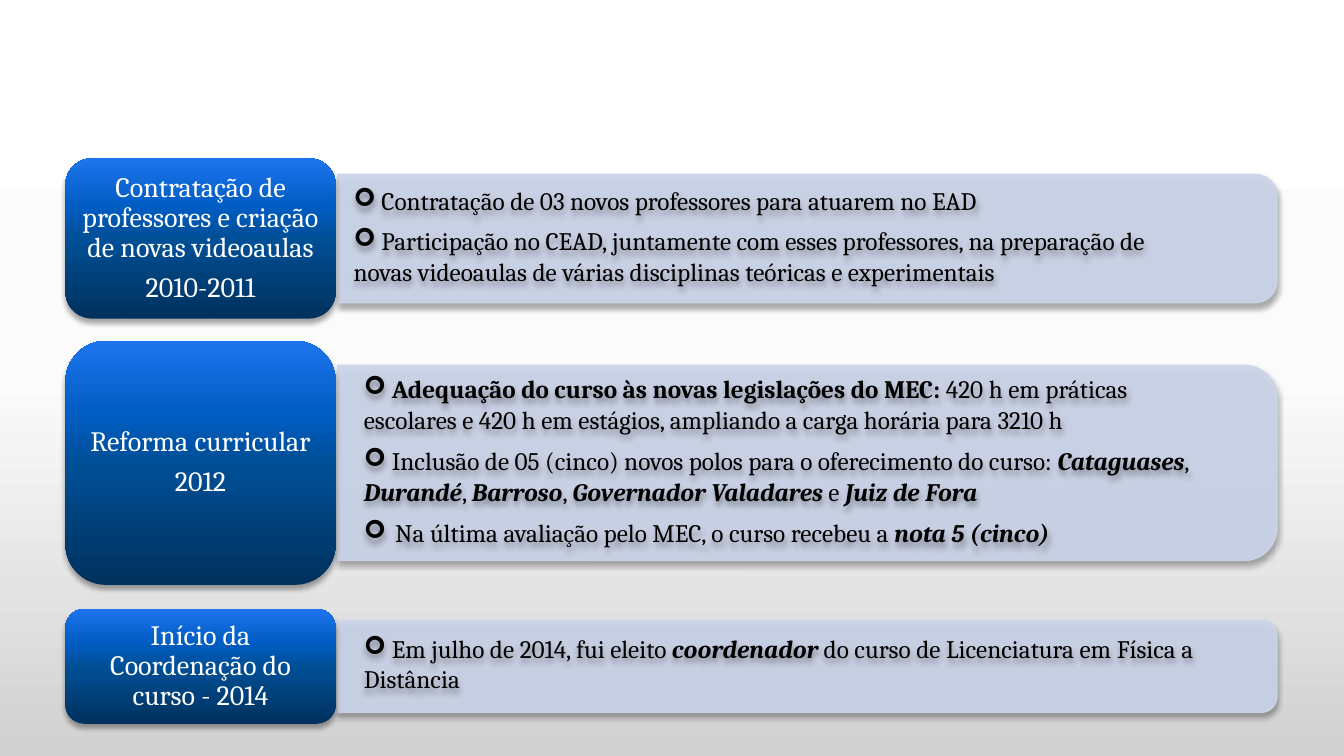
from lxml.etree import SubElement
from pptx import Presentation
from pptx.dml.color import RGBColor
from pptx.enum.shapes import MSO_SHAPE
from pptx.enum.text import MSO_ANCHOR, PP_ALIGN
from pptx.oxml.ns import qn
from pptx.util import Cm, Pt

COLORS = {
    "white": "FFFFFF", "black": "000000", "panel": "CCD5EA",
    "mist": "FBFBFB", "silver": "D1D1D1",
    "navy": "00315D", "deep": "004F97", "blue": "005DC3", "bright": "1E74EE",
}
FONT = "Cambria"
CARD_LEFT, CARD_WIDTH = 1.65, 6.81
PANEL_LEFT, PANEL_WIDTH = 8.51, 23.67
LINE_HEIGHTS = {1: 1.02, 2: 1.81}

# Each note: number of lines, bullet indent, runs of (text, style)
ROWS = [
    dict(top=3.99, height=4.04, inset=0.15, note_width=21.87,
         heading=["Contratação de professores e criação de novas videoaulas", "2010-2011"],
         notes=[
             (1, 0, [(" Contratação de 03 novos professores para atuarem no EAD", "")]),
             (2, 0, [(" Participação no CEAD, juntamente com esses professores, na preparação de "
                      "novas videoaulas de várias disciplinas teóricas e experimentais", "")]),
         ]),
    dict(top=8.59, height=6.15, inset=0.41, note_width=21.87,
         heading=["Reforma curricular", "2012"],
         notes=[
             (2, 0, [(" Adequação do curso às novas legislações do MEC: ", "b"),
                     ("420 h em práticas escolares e 420 h em estágios, "
                      "ampliando a carga horária para 3210 h", "")]),
             (2, 0, [(" Inclusão de 05 (cinco) novos polos para o oferecimento do curso: ", ""),
                     ("Cataguases", "bi"), (", ", ""), ("Durandé", "bi"), (", ", ""),
                     ("Barroso", "bi"), (", ", ""), ("Governador Valadares", "bi"),
                     (" e ", ""), ("Juiz de Fora", "bi")]),
             (1, 0.79, [("Na última avaliação pelo MEC, o curso recebeu a ", ""),
                        ("nota 5 (cinco)", "bi")]),
         ]),
    dict(top=15.34, height=2.9, inset=0.41, note_width=22.61,
         heading=["Início da Coordenação do curso - 2014"],
         notes=[
             (2, 0, [(" Em julho de 2014, fui eleito ", ""), ("coordenador", "bi"),
                     (" do curso de Licenciatura em Física a Distância", "")]),
         ]),
]


def rgb(name):
    return RGBColor.from_string(COLORS[name])


def set_gradient(fill, element, angle, stops):
    fill.gradient()
    fill.gradient_angle = angle
    stop_list = next(element.iter(qn("a:gsLst")))
    for stop in list(stop_list):
        stop_list.remove(stop)
    for position, name in stops:
        stop = SubElement(stop_list, qn("a:gs"), pos=str(position * 1000))
        SubElement(stop, qn("a:srgbClr"), val=COLORS[name])


def add_shadow(shape):
    shape.shadow.inherit = False
    effects = next(shape.element.iter(qn("a:effectLst")))
    shadow = SubElement(effects, qn("a:outerShdw"), blurRad=str(Pt(4)), dist=str(Pt(3)),
                        dir="5400000", rotWithShape="0")
    color = SubElement(shadow, qn("a:srgbClr"), val=COLORS["black"])
    SubElement(color, qn("a:alpha"), val="35000")


def add_run(paragraph, text, size, color, style=""):
    run = paragraph.add_run()
    run.text = text
    run.font.name = FONT
    run.font.size = Pt(size)
    run.font.color.rgb = rgb(color)
    run.font.bold = "b" in style
    run.font.italic = "i" in style


def add_panel(slide, left, top, width, height):
    # Turned a quarter so that the rounded corners face right
    panel = slide.shapes.add_shape(
        MSO_SHAPE.ROUND_2_SAME_RECTANGLE,
        Cm(left + (width - height) / 2), Cm(top + (height - width) / 2),
        Cm(height), Cm(width))
    panel.rotation = 90
    panel.fill.solid()
    panel.fill.fore_color.rgb = rgb("panel")
    panel.line.color.rgb = rgb("panel")
    panel.line.width = Pt(1)
    for color in panel.element.spPr.iter(qn("a:srgbClr")):
        SubElement(color, qn("a:alpha"), val="90000")
    add_shadow(panel)


def add_card(slide, left, top, width, height, heading):
    card = slide.shapes.add_shape(MSO_SHAPE.ROUNDED_RECTANGLE,
                                  Cm(left), Cm(top), Cm(width), Cm(height))
    set_gradient(card.fill, card.element, 90,
                 [(0, "navy"), (50, "deep"), (70, "blue"), (100, "bright")])
    card.line.fill.background()
    add_shadow(card)
    frame = card.text_frame
    frame.word_wrap = True
    frame.vertical_anchor = MSO_ANCHOR.MIDDLE
    frame.margin_left = frame.margin_right = Cm(0.2)
    frame.margin_top = frame.margin_bottom = Cm(0.1)
    for index, text in enumerate(heading):
        paragraph = frame.add_paragraph() if index else frame.paragraphs[0]
        paragraph.alignment = PP_ALIGN.CENTER
        paragraph.line_spacing = 0.9
        paragraph.space_after = Pt(7)
        add_run(paragraph, text, 20, "white")


def add_note(slide, left, top, width, height, indent, runs):
    note = slide.shapes.add_textbox(Cm(left), Cm(top), Cm(width), Cm(height))
    add_shadow(note)
    note.text_frame.word_wrap = True
    paragraph = note.text_frame.paragraphs[0]
    properties = paragraph._p.get_or_add_pPr()
    properties.set("marL", str(Cm(indent)))
    properties.set("indent", str(-Cm(indent)))
    SubElement(properties, qn("a:buFont"), typeface="Wingdings")
    SubElement(properties, qn("a:buChar"), char="➢")
    for text, style in runs:
        add_run(paragraph, text, 18, "black", style)


def add_row(slide, top, height, inset, note_width, heading, notes):
    # The panel takes the middle 80 % of the card's height
    add_panel(slide, PANEL_LEFT, top + height * 0.1, PANEL_WIDTH, height * 0.8)
    add_card(slide, CARD_LEFT, top, CARD_WIDTH, height, heading)
    # Notes are stacked around the middle of the row
    stack_height = sum(LINE_HEIGHTS[lines] for lines, _, _ in notes)
    note_top = top + (height - stack_height) / 2 - 0.05
    for lines, indent, runs in notes:
        add_note(slide, PANEL_LEFT + inset, note_top, note_width,
                 LINE_HEIGHTS[lines], indent, runs)
        note_top += LINE_HEIGHTS[lines]


def main():
    deck = Presentation()
    deck.slide_width, deck.slide_height = Cm(33.87), Cm(19.05)
    slide = deck.slides.add_slide(deck.slide_layouts[6])
    set_gradient(slide.background.fill, slide.element, 270,
                 [(0, "white"), (50, "mist"), (100, "silver")])
    for row in ROWS:
        add_row(slide, **row)
    deck.save("out.pptx")


if __name__ == "__main__":
    main()
